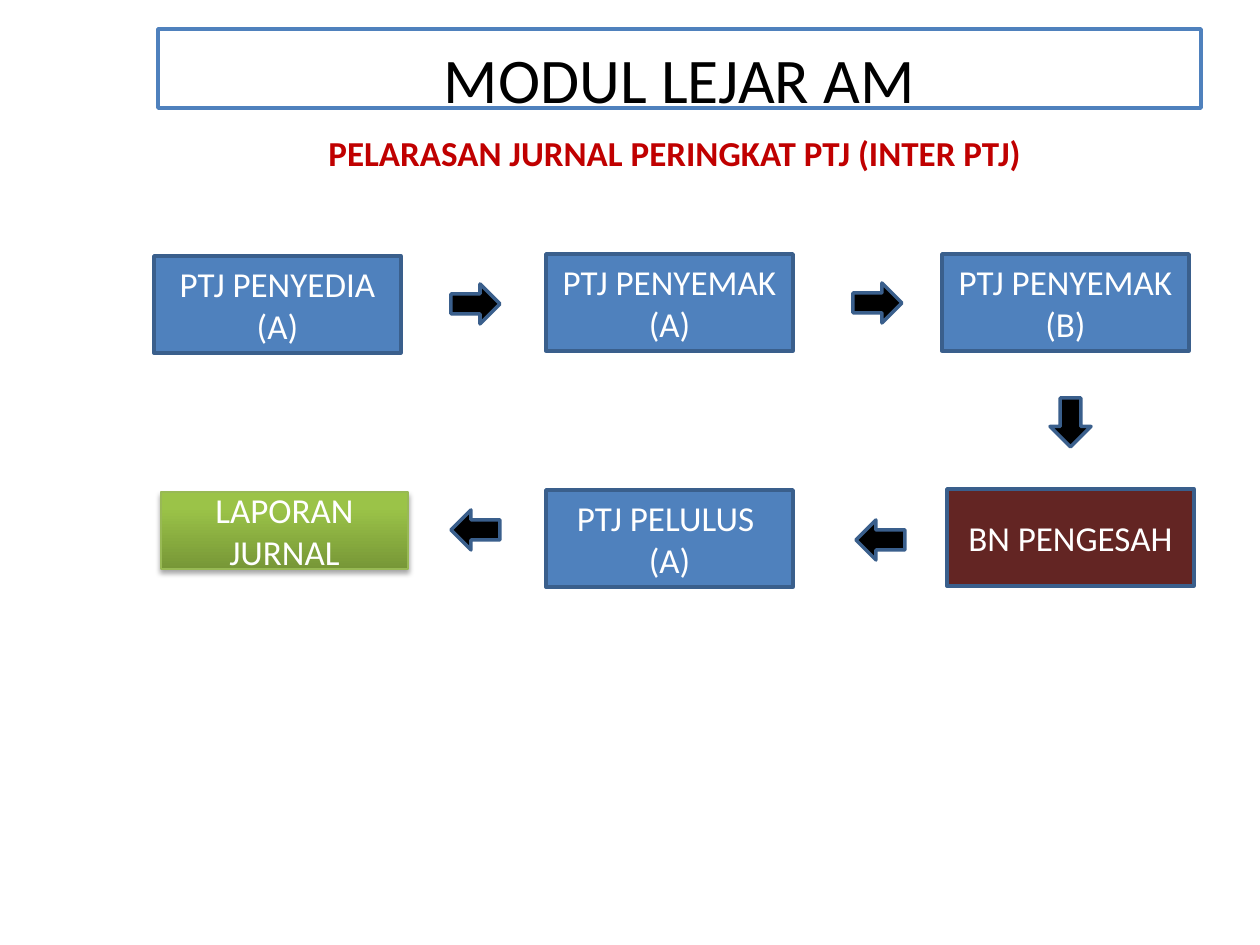
from pptx import Presentation, util as u
from pptx.dml.color import RGBColor
from pptx.enum import shapes, text
from pptx.oxml import parse_xml
from pptx.oxml.ns import nsdecls

SCALE = 914400 / 126
FONT = "Calibri"
BLUE, EDGE, MAROON, WHITE = "4F81BD", "3A5F8C", "632523", "FFFFFF"

TITLE = "MODUL LEJAR AM"
SUB = "PELARASAN JURNAL PERINGKAT PTJ (INTER PTJ)"
STEPS = [
    ("PTJ PENYEDIA\v(A)", 154, 256, BLUE),
    ("PTJ PENYEMAK\v(A)", 546, 254, BLUE),
    ("PTJ PENYEMAK\v(B)", 942, 254, BLUE),
    ("BN PENGESAH", 947, 489, MAROON),
    ("PTJ PELULUS \v(A)", 546, 490, BLUE),
]
STEP_SIZE = (247, 97)
REPORT = ("LAPORAN\vJURNAL", 161, 492, 247, 77)
KIND = shapes.MSO_SHAPE
ARROWS = [
    (KIND.RIGHT_ARROW, 451, 284, 49, 40),
    (KIND.RIGHT_ARROW, 853, 283, 49, 40),
    (KIND.DOWN_ARROW, 1050, 398, 41, 49),
    (KIND.LEFT_ARROW, 856, 520, 49, 40),
    (KIND.LEFT_ARROW, 451, 510, 49, 40),
]


def px(n):
    return u.Emu(round(n * SCALE))


def rgb(code):
    return RGBColor.from_string(code)


def paint(shape, fill, line, width=2):
    shape.fill.solid()
    shape.fill.fore_color.rgb = rgb(fill)
    shape.line.color.rgb = rgb(line)
    shape.line.width = u.Pt(width)


def write(shape, words, size, color, bold=False, align=text.PP_ALIGN.CENTER,
          anchor=text.MSO_ANCHOR.MIDDLE):
    frame = shape.text_frame
    frame.text = words
    frame.word_wrap = True
    frame.auto_size = text.MSO_AUTO_SIZE.NONE
    frame.vertical_anchor = anchor
    para = frame.paragraphs[0]
    para.alignment = align
    for run in para.runs:
        font = run.font
        font.name, font.size, font.bold = FONT, u.Pt(size), bold
        font.color.rgb = rgb(color)


def add(kind, box, fill, line, width=2):
    shape = slide.shapes.add_shape(kind, *map(px, box))
    shape.shadow.inherit = False
    paint(shape, fill, line, width)
    return shape


deck = Presentation()
deck.slide_width, deck.slide_height = u.Inches(10), u.Inches(7.5)
slide = deck.slides.add_slide(deck.slide_layouts[5])

title = slide.shapes.title
title.left, title.top, title.width, title.height = map(px, (158, 29, 1043, 79))
paint(title, WHITE, BLUE)
write(title, TITLE, 36.3, "000000", anchor=text.MSO_ANCHOR.TOP)
title.text_frame.margin_top = px(11)

sub = slide.shapes.add_textbox(*map(px, (316, 125, 747, 93)))
write(sub, SUB, 20, "C00000", True, text.PP_ALIGN.LEFT, text.MSO_ANCHOR.TOP)

for words, left, top, fill in STEPS:
    step = add(KIND.RECTANGLE, (left, top, *STEP_SIZE), fill, EDGE)
    write(step, words, 20, WHITE)

for kind, *box in ARROWS:
    add(kind, box, "000000", EDGE)

words, *box = REPORT
report = add(KIND.RECTANGLE, box, "9BC348", "98B955", 0.75)
report.fill.gradient()
report.fill.gradient_angle = 90
stops = report.fill.gradient_stops
for stop, spot, code in zip(stops, (0, 0.8), ("779737", "9BC348")):
    stop.position = spot
    stop.color.rgb = rgb(code)
effect = report._element.spPr.find(
    "{http://schemas.openxmlformats.org/drawingml/2006/main}effectLst")
effect.append(parse_xml(
    f'<a:outerShdw {nsdecls("a")} blurRad="{u.Pt(3.1)}" dist="{u.Pt(1.8)}" '
    'dir="5400000" rotWithShape="0"><a:srgbClr val="000000">'
    '<a:alpha val="35000"/></a:srgbClr></a:outerShdw>'))
write(report, words, 20, WHITE)

deck.save("out.pptx")
